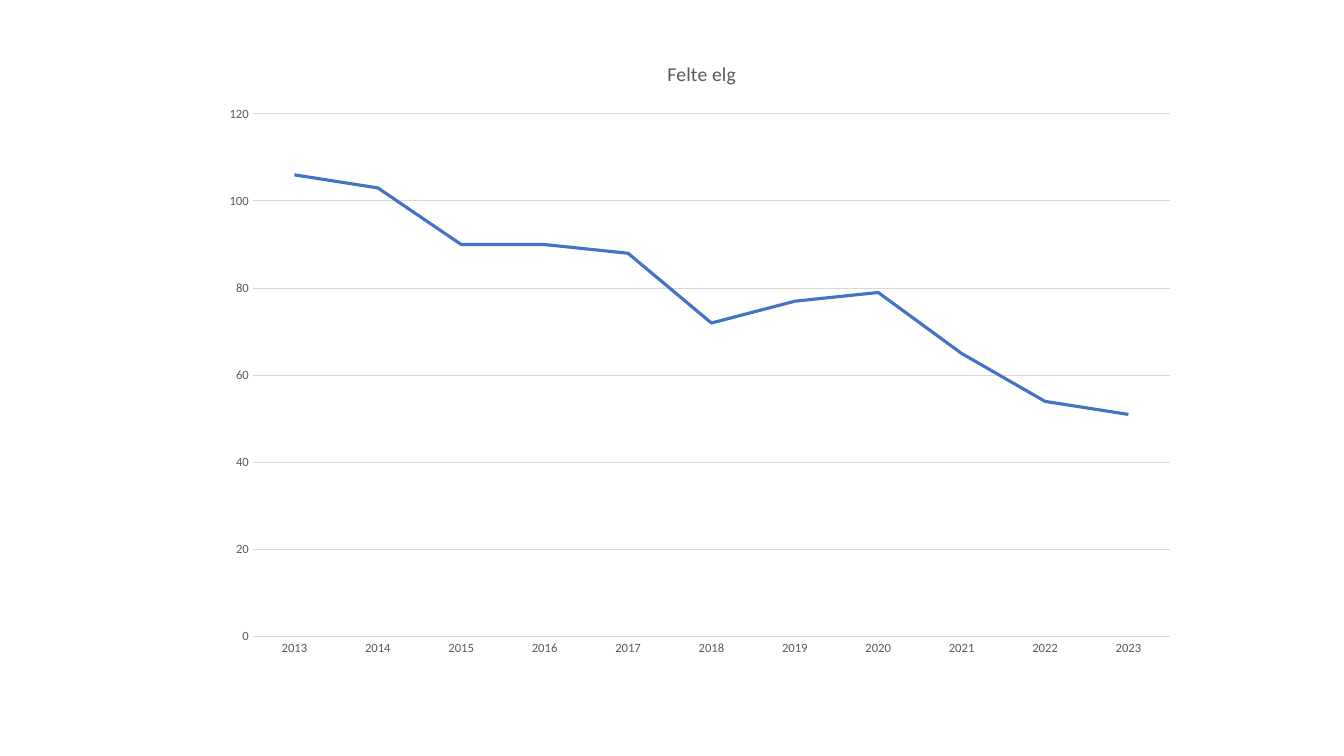
"""Build a slide with a line chart of moose felled per year."""
from typing import NamedTuple

from lxml.etree import SubElement
from pptx import Presentation
from pptx.chart.chart import Chart
from pptx.chart.data import CategoryChartData
from pptx.dml.color import RGBColor
from pptx.dml.line import LineFormat
from pptx.enum.chart import XL_CHART_TYPE, XL_MARKER_STYLE, XL_TICK_MARK
from pptx.oxml.ns import qn
from pptx.text.text import Font
from pptx.util import Inches, Pt

COLORS = {"line": "4472C4", "text": "595959", "grid": "D9D9D9"}
FONT = "Calibri"
TITLE = "Felte elg"
FIRST_YEAR = 2013


class PlotArea(NamedTuple):
    x: float
    y: float
    w: float
    h: float


FELLED = (106, 103, 90, 90, 88, 72, 77, 79, 65, 54, 51)
PLOT = PlotArea(0.04, 0.12, 0.94, 0.83)


def style_font(font: Font, size: float) -> None:
    font.name = FONT
    font.size = Pt(size)
    font.bold = False
    font.color.rgb = RGBColor.from_string(COLORS["text"])


def style_line(line: LineFormat, color: str, width: float) -> None:
    line.color.rgb = RGBColor.from_string(COLORS[color])
    line.width = Pt(width)


def place_plot(chart: Chart, area: PlotArea) -> None:
    plot_area = chart.plots[0]._element.getparent()
    for old in plot_area.findall(qn("c:layout")):
        plot_area.remove(old)
    layout = SubElement(plot_area, qn("c:layout"))
    plot_area.insert(0, layout)
    manual = SubElement(layout, qn("c:manualLayout"))
    settings = {"layoutTarget": "inner", "xMode": "edge", "yMode": "edge"}
    settings.update({k: str(v) for k, v in area._asdict().items()})
    for tag, val in settings.items():
        SubElement(manual, qn(f"c:{tag}")).set("val", val)


def style_chart(chart: Chart) -> None:
    chart.has_legend = False
    chart.font.name = FONT
    chart.font.size = Pt(10)
    chart.has_title = True
    tf = chart.chart_title.text_frame
    tf.text = TITLE
    style_font(tf.paragraphs[0].font, 14)
    chart.chart_title.include_in_layout = False

    for axis in (chart.category_axis, chart.value_axis):
        axis.major_tick_mark = XL_TICK_MARK.NONE
        axis.minor_tick_mark = XL_TICK_MARK.NONE
        style_font(axis.tick_labels.font, 9)
    style_line(chart.category_axis.format.line, "grid", 0.75)

    value_axis = chart.value_axis
    value_axis.minimum_scale, value_axis.maximum_scale = 0, 120
    value_axis.major_unit = 20
    value_axis.format.line.fill.background()
    style_line(value_axis.major_gridlines.format.line, "grid", 0.75)

    plot = chart.plots[0]
    plot.vary_by_categories = False
    series = plot.series[0]
    series.smooth = False
    series.marker.style = XL_MARKER_STYLE.NONE
    style_line(series.format.line, "line", 2.25)
    place_plot(chart, PLOT)


def main() -> None:
    prs = Presentation()
    prs.slide_width, prs.slide_height = Inches(13.33), Inches(7.5)
    s = prs.slides.add_slide(prs.slide_layouts[6])
    data = CategoryChartData()
    data.categories = [str(FIRST_YEAR + i) for i in range(len(FELLED))]
    data.add_series(TITLE, FELLED)
    frame = s.shapes.add_chart(
        XL_CHART_TYPE.LINE, Inches(2.12), Inches(0.38), Inches(9.68), Inches(6.25), data
    )
    style_chart(frame.chart)
    prs.save("out.pptx")


if __name__ == "__main__":
    main()
